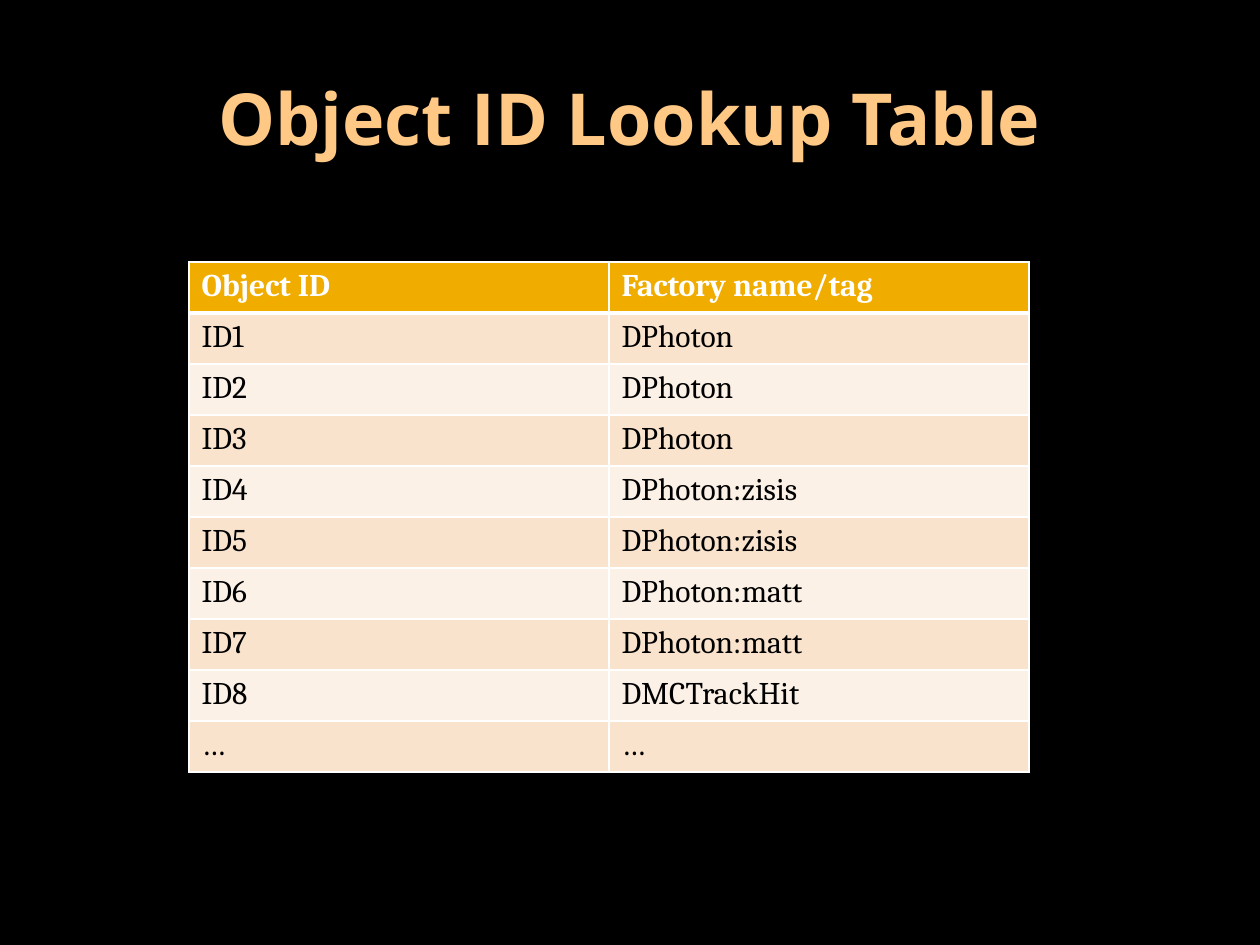
from lxml.etree import SubElement
from pptx import Presentation
from pptx.dml.color import RGBColor
from pptx.enum.text import MSO_ANCHOR, MSO_AUTO_SIZE, PP_ALIGN
from pptx.oxml.ns import qn
from pptx.util import Emu, Pt

PX_PER_INCH = 126
TITLE_ONLY = 5
LOOKUP_ROWS = [
    ("Object ID", "Factory name/tag"),
    ("ID1", "DPhoton"),
    ("ID2", "DPhoton"),
    ("ID3", "DPhoton"),
    ("ID4", "DPhoton:zisis"),
    ("ID5", "DPhoton:zisis"),
    ("ID6", "DPhoton:matt"),
    ("ID7", "DPhoton:matt"),
    ("ID8", "DMCTrackHit"),
    ("…", "…"),
]


def px(length):
    return Emu(round(length * 914400 / PX_PER_INCH))


def color(hex_value):
    return RGBColor.from_string(hex_value)


class SlideBuilder:
    heading_font = "Open Sans"
    body_font = "Cambria"
    background = "000000"
    heading_color = "FFC985"
    header_fill = "F0AD00"
    band_fills = ("FCF1E7", "F9E3CC")
    border_color = "FFFFFF"
    header_text = "FFFFFF"
    body_text = "000000"

    def __init__(self, presentation):
        self.slide = presentation.slides.add_slide(presentation.slide_layouts[TITLE_ONLY])
        fill = self.slide.background.fill
        fill.solid()
        fill.fore_color.rgb = color(self.background)

    def style_text(self, paragraph, font, size, hex_value, bold):
        for run in paragraph.runs:
            run.font.name = font
            run.font.size = Pt(size)
            run.font.bold = bold
            run.font.color.rgb = color(hex_value)

    def title(self, text, left, top, width, height):
        heading = self.slide.shapes.title
        heading.left, heading.top = px(left), px(top)
        heading.width, heading.height = px(width), px(height)
        frame = heading.text_frame
        frame.text = text
        frame.word_wrap = True
        frame.auto_size = MSO_AUTO_SIZE.NONE
        frame.vertical_anchor = MSO_ANCHOR.MIDDLE
        frame.paragraphs[0].alignment = PP_ALIGN.CENTER
        self.style_text(frame.paragraphs[0], self.heading_font, 41, self.heading_color, True)

    def borders(self, cell, **widths):
        properties = cell._tc.get_or_add_tcPr()
        for side in "LRTB":
            line = SubElement(properties, qn(f"a:ln{side}"), w=str(Pt(widths.get(side, 1))))
            fill = SubElement(line, qn("a:solidFill"))
            SubElement(fill, qn("a:srgbClr"), val=self.border_color)

    def table(self, rows, left, top, column_width, row_height):
        column_count = len(rows[0])
        lookup = self.slide.shapes.add_table(
            len(rows), column_count, px(left), px(top),
            px(column_width * column_count), px(row_height * len(rows)),
        ).table
        for column in lookup.columns:
            column.width = px(column_width)
        for row_index, values in enumerate(rows):
            lookup.rows[row_index].height = px(row_height)
            is_header = row_index == 0
            fill = self.header_fill if is_header else self.band_fills[row_index % 2]
            text_color = self.header_text if is_header else self.body_text
            rule = {0: {"B": 3}, 1: {"T": 3}}.get(row_index, {})
            for column_index, value in enumerate(values):
                cell = lookup.cell(row_index, column_index)
                cell.text_frame.text = value
                self.style_text(cell.text_frame.paragraphs[0], self.body_font, 18,
                                text_color, is_header)
                self.borders(cell, **rule)
                cell.fill.solid()
                cell.fill.fore_color.rgb = color(fill)


def main():
    presentation = Presentation()
    presentation.slide_width, presentation.slide_height = px(1260), px(945)
    builder = SlideBuilder(presentation)
    builder.title("Object ID Lookup Table", 63, 38, 1134, 158)
    builder.table(LOOKUP_ROWS, left=189, top=262, column_width=420, row_height=51)
    presentation.save("out.pptx")


if __name__ == "__main__":
    main()
